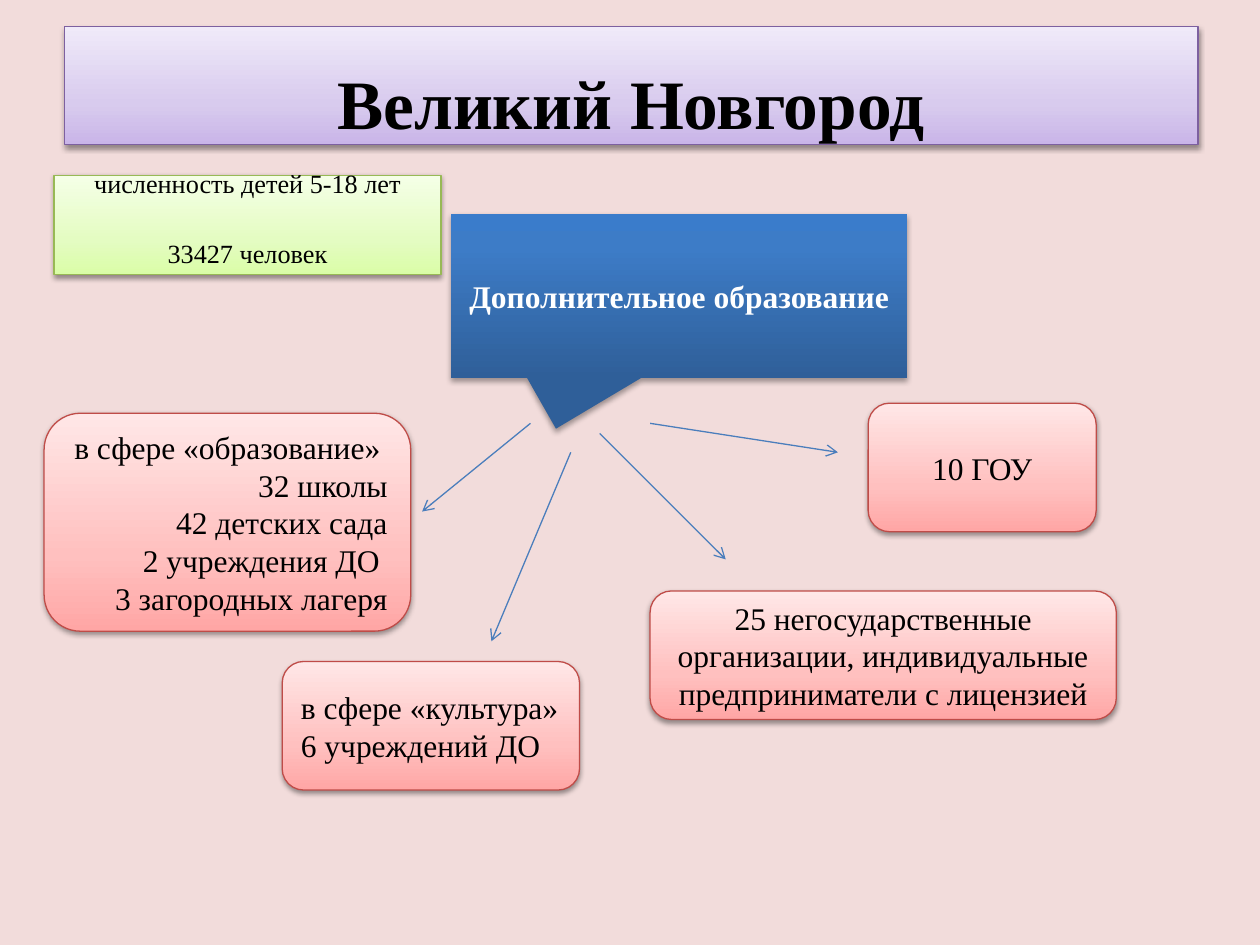
"""Builds the slide on extra education in Великий Новгород."""
import copy

import lxml.etree
import pptx
import pptx.dml.color
import pptx.enum.shapes
import pptx.enum.text
import pptx.oxml
import pptx.oxml.ns
import pptx.util

Inches = pptx.util.Inches
Pt = pptx.util.Pt
qn = pptx.oxml.ns.qn
KIND = pptx.enum.shapes.MSO_SHAPE
ALIGN = pptx.enum.text.PP_ALIGN
LEFT, MID, RIGHT = ALIGN.LEFT, ALIGN.CENTER, ALIGN.RIGHT
SHADOW = (
    '<a:outerShdw xmlns:a="http://schemas.openxmlformats.org/drawingml/2006/main"'
    ' blurRad="{}" dist="{}" dir="5400000" rotWithShape="0">'
    '<a:srgbClr val="000000"><a:alpha val="{}"/></a:srgbClr></a:outerShdw>'
)
ROSE = [(0, "FFA6A5"), (0.35, "FFC0BF"), (1, "FFE7E7")]
LIME = [(0, "DAFDA7"), (0.35, "E4FCC2"), (1, "F5FFE7")]
LILAC = [(0, "C9B5E8"), (0.35, "D8CBEE"), (1, "F0EAF9")]
BLUE = [(0, "2F5F99"), (0.8, "3D7CC7"), (1, "3A7CCB")]


def tint(color, code):
    color.rgb = pptx.dml.color.RGBColor.from_string(code)


def card(kind, place, stops, edge, rows, size=18, ink="000000", bold=False):
    shape = slide.shapes.add_shape(kind, *map(Inches, place))
    fill = shape.fill
    fill.gradient()
    fill.gradient_angle = 90
    first = shape._element.spPr.find(".//" + qn("a:gs"))
    first.addnext(copy.deepcopy(first))
    for stop, (spot, code) in zip(fill.gradient_stops, stops):
        stop.position = spot
        tint(stop.color, code)
    if edge:
        tint(shape.line.color, edge)
        shape.line.width = Pt(0.75)
    else:
        shape.line.fill.background()
    shape.shadow.inherit = False
    dist, alpha = (Pt(1.6), 38000) if edge else (Pt(1.8), 35000)
    glow = pptx.oxml.parse_xml(SHADOW.format(Pt(3.1), dist, alpha))
    shape._element.spPr.find(qn("a:effectLst")).append(glow)
    frame = shape.text_frame
    frame.word_wrap = True
    frame.text = "\n".join(text for text, side in rows)
    for para, (text, side) in zip(frame.paragraphs, rows):
        para.alignment = side
        para.font.name = "Times New Roman"
        para.font.size = Pt(size)
        para.font.bold = bold
        tint(para.font.color, ink)
    return shape


deck = pptx.Presentation()
deck.slide_width, deck.slide_height = Inches(10), Inches(7.5)
slide = deck.slides.add_slide(deck.slide_layouts[6])
slide.background.fill.solid()
tint(slide.background.fill.fore_color, "F2DCDB")

title = card(KIND.RECTANGLE, (0.51, 0.21, 9, 0.94), LILAC, "7D60A0",
             [("Великий Новгород", MID)], 39.6, bold=True)
title.text_frame.margin_top = Inches(0.31)

count = card(KIND.RECTANGLE, (0.43, 1.39, 3.07, 0.79), LIME, "98B955",
             [("численность детей 5-18 лет", MID), ("33427 человек", MID)], 15)
count.text_frame.vertical_anchor = pptx.enum.text.MSO_ANCHOR.BOTTOM
count.text_frame.margin_top = 0
count.text_frame.paragraphs[1].space_before = Pt(21.6)

topic = card(KIND.RECTANGULAR_CALLOUT, (3.58, 1.7, 3.62, 1.3), BLUE, None,
             [("Дополнительное образование", MID)], ink="FFFFFF", bold=True)
topic.adjustments[0] = -0.27
topic.adjustments[1] = 0.81

groups = [
    ((0.35, 3.28, 2.91, 1.73), [
        ("в сфере «образование»", MID),
        ("32 школы", RIGHT),
        ("42 детских сада", RIGHT),
        ("2 учреждения ДО ", RIGHT),
        ("3 загородных лагеря", RIGHT),
    ]),
    ((2.24, 5.25, 2.36, 1.02), [
        ("в сфере «культура»", LEFT),
        ("6 учреждений ДО", LEFT),
    ]),
    ((6.89, 3.2, 1.81, 1.02), [("10 ГОУ", MID)]),
    ((5.16, 4.69, 3.7, 1.02), [
        ("25 негосударственные организации, индивидуальные "
         "предприниматели с лицензией", MID),
    ]),
]
for place, rows in groups:
    card(KIND.ROUNDED_RECTANGLE, place, ROSE, "BF4C48", rows)

arrows = [
    (4.21, 3.36, 3.35, 4.06),
    (4.53, 3.59, 3.9, 5.09),
    (5.16, 3.36, 6.65, 3.59),
    (4.76, 3.44, 5.76, 4.44),
]
for ends in arrows:
    arrow = slide.shapes.add_connector(
        pptx.enum.shapes.MSO_CONNECTOR.STRAIGHT, *map(Inches, ends))
    tint(arrow.line.color, "4B7EBC")
    arrow.line.width = Pt(0.75)
    props = arrow._element.spPr
    lxml.etree.SubElement(props.find(qn("a:ln")), qn("a:tailEnd"), type="arrow")
    lxml.etree.SubElement(props, qn("a:effectLst"))

deck.save("out.pptx")
